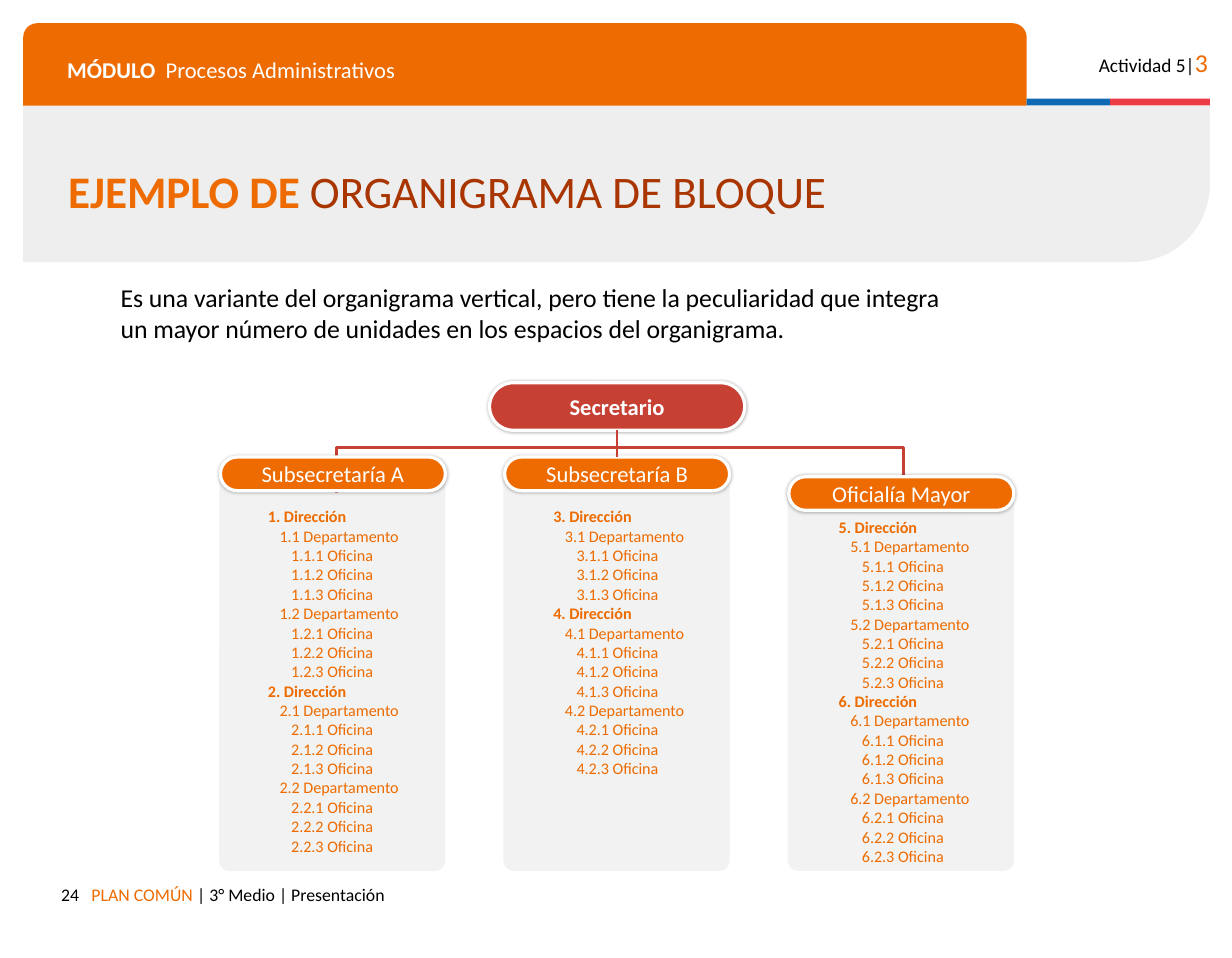
"""Builds the block organization chart slide."""
import math
import lxml.etree
import pptx
import pptx.dml.color
import pptx.enum.shapes
import pptx.enum.text
import pptx.oxml.ns
import pptx.util

Inches = pptx.util.Inches
Pt = pptx.util.Pt
Kind = pptx.enum.shapes.MSO_SHAPE
Align = pptx.enum.text.PP_ALIGN
Anchor = pptx.enum.text.MSO_ANCHOR

FONT = "Calibri"
ORANGE, RED, BROWN, GRAY = "ED6B00", "C64033", "A93501", "EEEEEE"
BLUE, CORAL, CARD, WHITE, BLACK = "0F69B4", "EB3C46", "F2F2F2", "FFFFFF", "000000"

ACTIVITY = [("Actividad 5|", 12, BLACK, False), ("3", 16, ORANGE, False)]
MODULE = [("MÓDULO", 14, WHITE, True), ("\tProcesos Administrativos", 14, WHITE, False)]
TITLE = [("EJEMPLO DE ", 28, ORANGE, True), ("ORGANIGRAMA DE BLOQUE", 28, BROWN, False)]
INTRO = [("Es una variante del organigrama vertical, pero tiene la peculiaridad que integra "
          "un mayor número de unidades en los espacios del organigrama.", 16, BLACK, False)]
FOOTER = [("PLAN COMÚN ", 11, ORANGE, False), ("| 3° Medio | Presentación", 11, BLACK, False)]
NUMBER = [("24", 11, BLACK, False)]
CHIEF = "Secretario"
OFFICES = 3
BRANCHES = [
    {"name": "Subsecretaría A", "areas": {1: 2, 2: 2}, "card": 3.99, "pill": 3.94, "list": 4.32},
    {"name": "Subsecretaría B", "areas": {3: 1, 4: 2}, "card": 3.99, "pill": 3.94, "list": 4.32},
    {"name": "Oficialía Mayor", "areas": {5: 2, 6: 2}, "card": 4.21, "pill": 4.11, "list": 4.41},
]
STEP, CARD_END = 2.45, 7.51


def color(code):
    return pptx.dml.color.RGBColor.from_string(code)


def paint(shape, fill):
    shape.shadow.inherit = False
    shape.fill.solid()
    shape.fill.fore_color.rgb = color(fill)
    shape.line.fill.background()
    return shape


def block(kind, box, fill, *rounds):
    shape = slide.shapes.add_shape(kind, *map(Inches, box))
    for index, value in enumerate(rounds):
        shape.adjustments[index] = value
    return paint(shape, fill)


def outline(points, close):
    scaled = [(Inches(x), Inches(y)) for x, y in points]
    pen = slide.shapes.build_freeform(*scaled[0])
    pen.add_line_segments(scaled[1:], close=close)
    return pen.convert_to_shape()


def stroke(shape, code, width):
    shape.line.color.rgb = color(code)
    shape.line.width = Pt(width)


def set_frame(shape, inset, anchor):
    frame = shape.text_frame
    frame.word_wrap = True
    frame.vertical_anchor = anchor
    frame.margin_left = frame.margin_right = Inches(inset)
    frame.margin_top = frame.margin_bottom = Inches(inset)
    return frame


def write(para, runs, align=Align.LEFT):
    para.alignment = align
    for text, size, code, bold in runs:
        run = para.add_run()
        run.text = text
        run.font.name = FONT
        run.font.size = Pt(size)
        run.font.bold = bold
        run.font.color.rgb = color(code)


def label(box, runs, inset=0.1, anchor=Anchor.TOP, align=Align.LEFT):
    area = slide.shapes.add_textbox(*map(Inches, box))
    para = set_frame(area, inset, anchor).paragraphs[0]
    write(para, runs, align)
    return para


def pill(box, fill, text, bold):
    shape = block(Kind.ROUNDED_RECTANGLE, box, fill, 0.5)
    stroke(shape, WHITE, 2)
    tag = pptx.oxml.ns.qn
    effects = shape.element.spPr.find(tag("a:effectLst"))
    shade = lxml.etree.SubElement(effects, tag("a:outerShdw"), blurRad=str(Pt(2)), dist="0", dir="0")
    tint = lxml.etree.SubElement(shade, tag("a:srgbClr"), val=BLACK)
    lxml.etree.SubElement(tint, tag("a:alpha"), val="28000")
    para = set_frame(shape, 0.05, Anchor.MIDDLE).paragraphs[0]
    write(para, [(text, 14, WHITE, bold)], Align.CENTER)
    return shape


def units(areas):
    for area, count in areas.items():
        yield 0, f"{area}. Dirección"
        for dept in range(1, count + 1):
            yield 1, f"{area}.{dept} Departamento"
            for office in range(1, OFFICES + 1):
                yield 2, f"{area}.{dept}.{office} Oficina"


def listing(box, areas):
    area = slide.shapes.add_textbox(*map(Inches, box))
    frame = set_frame(area, 0.05, Anchor.TOP)
    for index, (depth, text) in enumerate(units(areas)):
        para = frame.add_paragraph() if index else frame.paragraphs[0]
        if depth:
            props = para._p.get_or_add_pPr()
            props.set("marL", "0")
            props.set("indent", str(Inches(0.1 * depth)))
        write(para, [(text, 10, ORANGE, depth == 0)])


def header():
    left, top, right, bottom, radius = 0.2, 0.91, 10.43, 2.26, 0.67
    arc = [(right - radius + radius * math.cos(math.radians(angle)),
            bottom - radius + radius * math.sin(math.radians(angle)))
           for angle in range(0, 91, 3)]
    paint(outline([(left, top), (right, top), *arc, (left, bottom)], True), GRAY)
    block(Kind.ROUND_2_SAME_RECTANGLE, (0.2, 0.2, 8.65, 0.71), ORANGE, 0.17, 0)
    block(Kind.RECTANGLE, (8.85, 0.85, 0.72, 0.06), BLUE)
    block(Kind.RECTANGLE, (9.57, 0.85, 0.86, 0.06), CORAL)
    label((9.23, 0.3, 1.28, 0.43), ACTIVITY, align=Align.RIGHT)
    para = label((0.48, 0.38, 8.14, 0.41), MODULE)
    tag = pptx.oxml.ns.qn
    tabs = lxml.etree.SubElement(para._p.get_or_add_pPr(), tag("a:tabLst"))
    lxml.etree.SubElement(tabs, tag("a:tab"), pos=str(Inches(0.85)), algn="l")
    label((0.49, 1.39, 7.13, 0.59), TITLE, anchor=Anchor.MIDDLE).line_spacing = 0.8


def chart():
    for col, branch in enumerate(BRANCHES):
        top = branch["card"]
        block(Kind.ROUNDED_RECTANGLE, (1.89 + STEP * col, top, 1.95, CARD_END - top), CARD, 0.048)
    bus = outline([(2.9, 4.25), (2.9, 3.86), (7.79, 3.86), (7.79, 4.37)], False)
    bus.shadow.inherit = False
    bus.fill.background()
    stroke(bus, RED, 1.5)
    chief = pill((4.22, 3.3, 2.2, 0.41), RED, CHIEF, True)
    pills = []
    for col, branch in enumerate(BRANCHES):
        box = (1.9 + STEP * col, branch["pill"], 1.94, 0.29)
        pills.append(pill(box, ORANGE, branch["name"], False))
        listing((2.26 + 2.46 * col, branch["list"], 1.27, 3.32), branch["areas"])
    trunk = slide.shapes.add_connector(pptx.enum.shapes.MSO_CONNECTOR.STRAIGHT, 0, 0, 0, 0)
    trunk.begin_connect(chief, 2)
    trunk.end_connect(pills[1], 0)
    stroke(trunk, RED, 1.5)
    lxml.etree.SubElement(trunk._element.spPr, pptx.oxml.ns.qn("a:effectLst"))


deck = pptx.Presentation()
deck.slide_width, deck.slide_height = Inches(10.62), Inches(8.26)
slide = deck.slides.add_slide(deck.slide_layouts[6])
header()
label((0.99, 2.38, 7.23, 0.61), INTRO, inset=0.05)
chart()
label((0.69, 7.53, 7.14, 0.35), FOOTER)
label((0.41, 7.53, 0.37, 0.35), NUMBER, align=Align.RIGHT)
deck.save("out.pptx")
